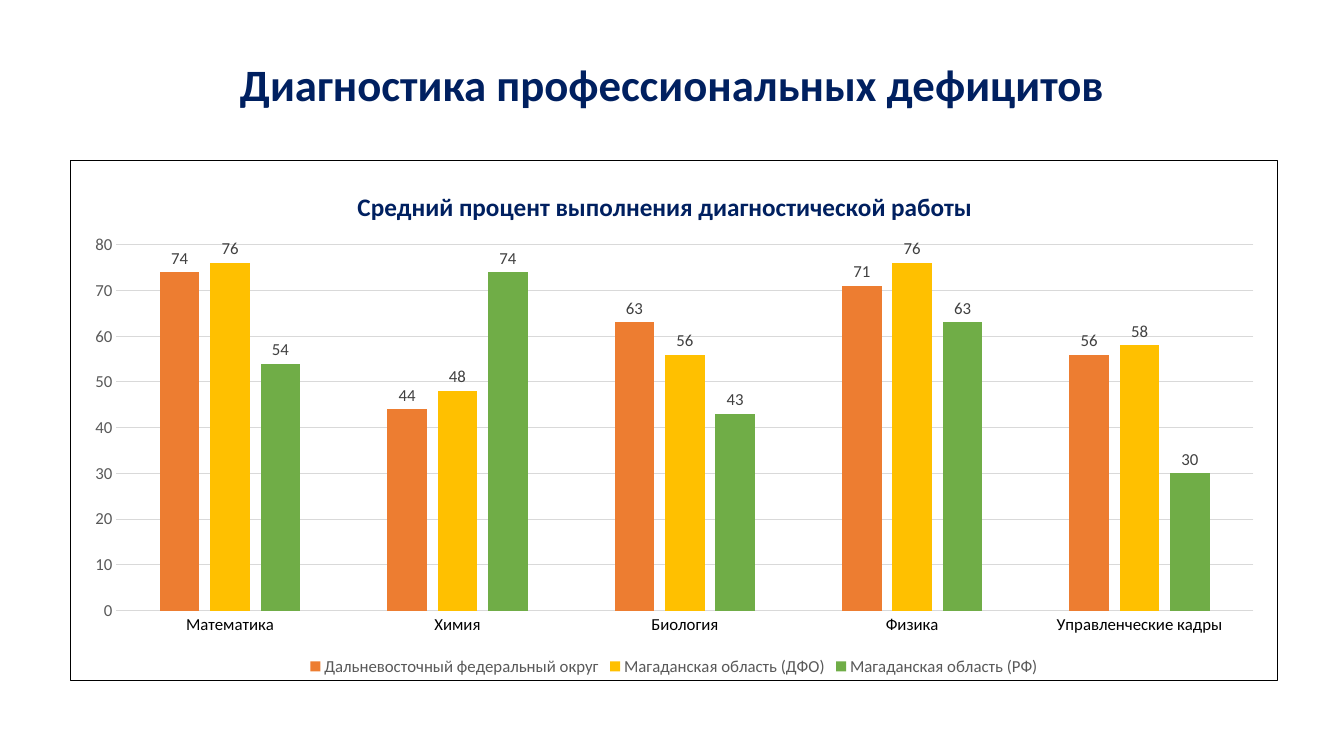
"""Build a slide with a clustered column chart of diagnostic results."""
import pptx
import pptx.chart.data
import pptx.dml.color
import pptx.enum.chart
import pptx.enum.text
import pptx.oxml
import pptx.oxml.ns
import pptx.util

SCALE = 914400 / 100.8
NAVY, GREY, GRID, BLACK = "002060", "595959", "D9D9D9", "000000"


def color(value):
    return pptx.dml.color.RGBColor.from_string(value)


def style(font, size, value, bold=False):
    settings = {"name": "Calibri", "size": pptx.util.Pt(size), "bold": bold}
    for name, setting in settings.items():
        setattr(font, name, setting)
    font.color.rgb = color(value)


deck = pptx.Presentation()
deck.slide_width, deck.slide_height = round(1344 * SCALE), round(756 * SCALE)
page = deck.slides.add_slide(deck.slide_layouts[5])

title = page.shapes.title
bounds = {"left": 93, "top": 14, "width": 1159, "height": 146}
for name, length in bounds.items():
    setattr(title, name, round(length * SCALE))
title.text_frame.vertical_anchor = pptx.enum.text.MSO_ANCHOR.MIDDLE
para = title.text_frame.paragraphs[0]
para.alignment = pptx.enum.text.PP_ALIGN.CENTER
para.line_spacing = 0.9
span = para.add_run()
span.text = "Диагностика профессиональных дефицитов"
style(span.font, 32, NAVY, True)

results = [
    ("Дальневосточный федеральный округ", "ED7D31", (74, 44, 63, 71, 56)),
    ("Магаданская область (ДФО)", "FFC000", (76, 48, 56, 76, 58)),
    ("Магаданская область (РФ)", "70AD47", (54, 74, 43, 63, 30)),
]
data = pptx.chart.data.CategoryChartData()
data.categories = ["Математика", "Химия", "Биология", "Физика", "Управленческие кадры"]
for name, fill, values in results:
    data.add_series(name, values)
frame = [round(length * SCALE) for length in (70, 160, 1208, 521)]
chart = page.shapes.add_chart(
    pptx.enum.chart.XL_CHART_TYPE.COLUMN_CLUSTERED, *frame, data
).chart
style(chart.font, 10, BLACK)

chart.has_title = True
para = chart.chart_title.text_frame.paragraphs[0]
span = para.add_run()
span.text = "Средний процент выполнения диагностической работы"
style(span.font, 18, NAVY, True)
chart.chart_title.include_in_layout = False

chart.has_legend = True
chart.legend.position = pptx.enum.chart.XL_LEGEND_POSITION.BOTTOM
chart.legend.include_in_layout = False
style(chart.legend.font, 12, GREY)

for axis, value in ((chart.category_axis, BLACK), (chart.value_axis, GREY)):
    axis.major_tick_mark = axis.minor_tick_mark = pptx.enum.chart.XL_TICK_MARK.NONE
    style(axis.tick_labels.font, 12, value)
scale = {"minimum_scale": 0, "maximum_scale": 80, "major_unit": 10}
for name, setting in scale.items():
    setattr(chart.value_axis, name, setting)
chart.value_axis.format.line.fill.background()
for line in (chart.category_axis.format.line, chart.value_axis.major_gridlines.format.line):
    line.color.rgb = color(GRID)
    line.width = pptx.util.Pt(0.75)

plot = chart.plots[0]
plot.gap_width, plot.overlap, plot.vary_by_categories = 219, -27, False
for series, (name, fill, values) in zip(plot.series, results):
    series.format.fill.solid()
    series.format.fill.fore_color.rgb = color(fill)
    series.invert_if_negative = False
    labels = series.data_labels
    labels.show_value = True
    labels.position = pptx.enum.chart.XL_LABEL_POSITION.OUTSIDE_END
    style(labels.font, 12, "404040")

layouts = [
    ("c:chart/c:plotArea", 0, {"layoutTarget": "inner", "xMode": "edge", "yMode": "edge",
                               "x": 0.038, "y": 0.162, "w": 0.942, "h": 0.704}),
    ("c:chart/c:title", 1, {"xMode": "edge", "yMode": "edge", "x": 0.234, "y": 0.047}),
]
for location, index, settings in layouts:
    part = chart.element.xpath(location)[0]
    for layout in part.xpath("c:layout"):
        part.remove(layout)
    marks = "".join(f'<c:{name} val="{setting}"/>' for name, setting in settings.items())
    part.insert(index, pptx.oxml.parse_xml(
        f'<c:layout {pptx.oxml.ns.nsdecls("c")}><c:manualLayout>{marks}</c:manualLayout></c:layout>'
    ))

chart.element.xpath("c:chart")[0].addnext(pptx.oxml.parse_xml(
    f'<c:spPr {pptx.oxml.ns.nsdecls("c", "a")}><a:noFill/><a:ln w="9525"><a:solidFill>'
    f'<a:srgbClr val="{BLACK}"/></a:solidFill></a:ln></c:spPr>'
))

deck.save("out.pptx")
